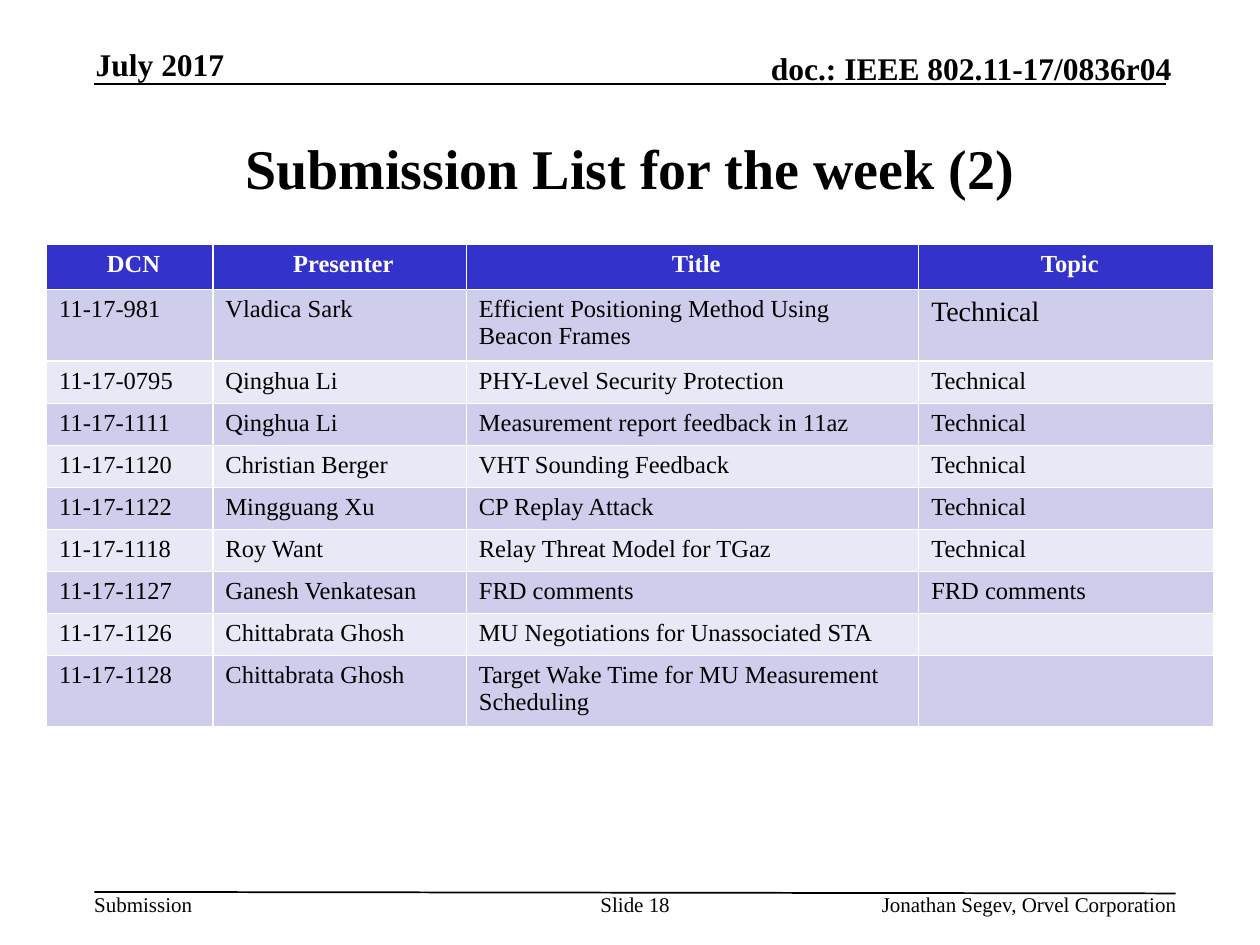
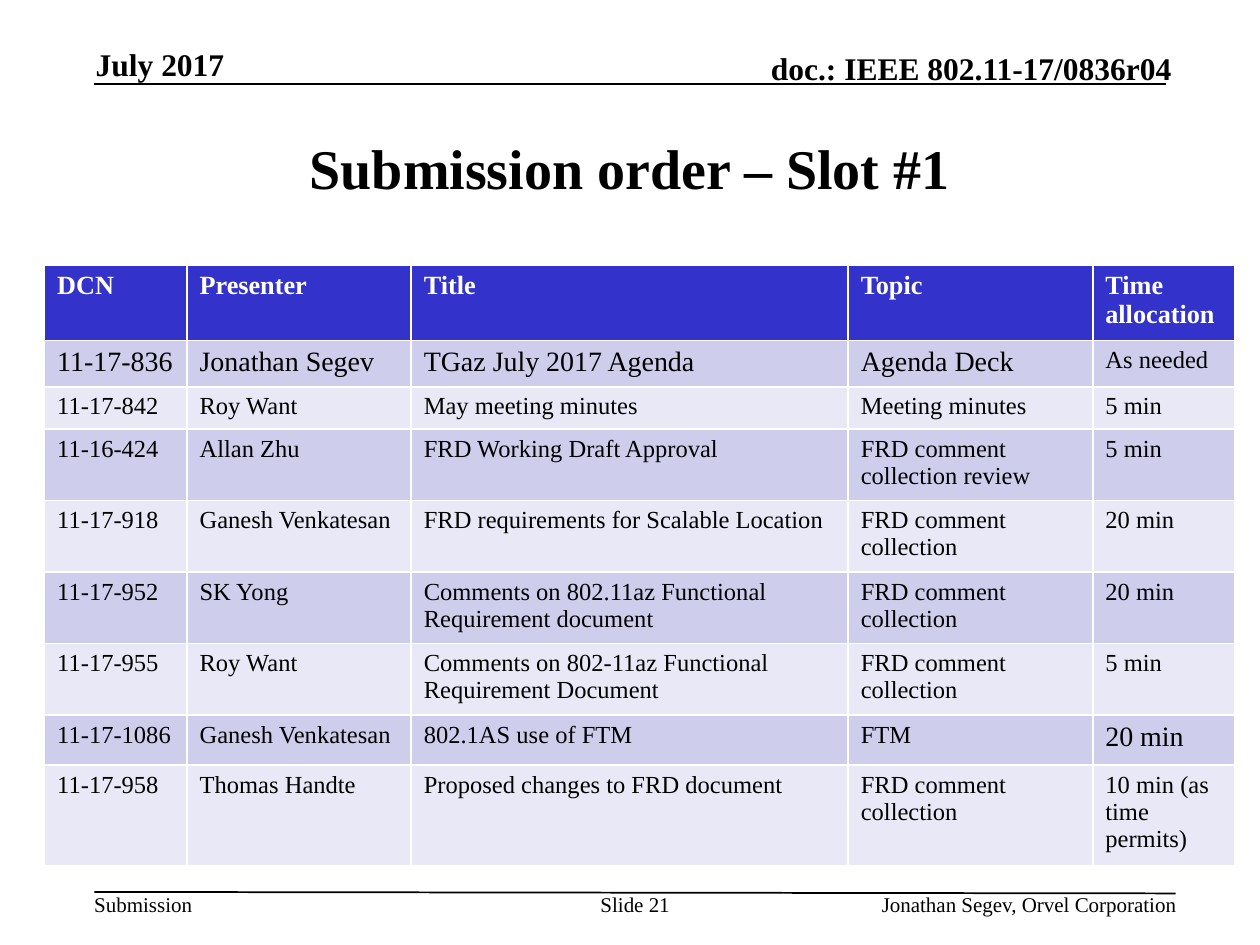
from dataclasses import dataclass

from lxml import etree
from pptx import Presentation
from pptx.dml.color import RGBColor
from pptx.enum.shapes import MSO_CONNECTOR
from pptx.enum.text import MSO_ANCHOR, PP_ALIGN
from pptx.oxml.ns import qn
from pptx.util import Cm, Pt

LEFT, CENTER, RIGHT = PP_ALIGN.LEFT, PP_ALIGN.CENTER, PP_ALIGN.RIGHT
TOP, MIDDLE, BOTTOM = MSO_ANCHOR.TOP, MSO_ANCHOR.MIDDLE, MSO_ANCHOR.BOTTOM
STRAIGHT = MSO_CONNECTOR.STRAIGHT
TITLE_ONLY = 5


@dataclass(frozen=True)
class Theme:
    font: str = "Times New Roman"
    ink: str = "000000"
    paper: str = "FFFFFF"
    header: str = "3333CC"
    bands: tuple = ("CECEEC", "E8E8F6")
    title_size: int = 32
    band_size: int = 18
    large_size: int = 16
    cell_size: int = 14
    footer_size: int = 12


THEME = Theme()

SLIDES = [
    {
        "title": "Submission List for the week (2)",
        "number": 18,
        "corner": (0.94, 4.93),
        "columns": [3.35, 5.11, 9.12, 5.94],
        "heights": [0.91, 1.34] + [0.8] * 7 + [1.34],
        "header": {"size": 14, "align": CENTER},
        "header_margin": 0.1,
        "large_cells": {(1, 3)},
        "rows": [
            ("DCN", "Presenter", "Title", "Topic"),
            ("11-17-981", "Vladica Sark", "Efficient Positioning Method Using Beacon Frames", "Technical"),
            ("11-17-0795", "Qinghua Li", "PHY-Level Security Protection", "Technical"),
            ("11-17-1111", "Qinghua Li", "Measurement report feedback in 11az", "Technical"),
            ("11-17-1120", "Christian Berger", "VHT Sounding Feedback", "Technical"),
            ("11-17-1122", "Mingguang Xu", "CP Replay Attack", "Technical"),
            ("11-17-1118", "Roy Want", "Relay Threat Model for TGaz", "Technical"),
            ("11-17-1127", "Ganesh Venkatesan", "FRD comments", "FRD comments"),
            ("11-17-1126", "Chittabrata Ghosh", "MU Negotiations for Unassociated STA", ""),
            ("11-17-1128", "Chittabrata Ghosh", "Target Wake Time for MU Measurement Scheduling", ""),
        ],
    },
    {
        "title": "Submission order – Slot #1",
        "number": 21,
        "corner": (0.9, 5.34),
        "columns": [2.87, 4.52, 8.81, 4.93, 2.87],
        "heights": [1.42, 0.85, 0.85] + [1.34] * 4 + [1.01, 1.88],
        "header": {"size": 15, "align": LEFT},
        "header_margin": 0.25,
        "large_cells": {(1, 0), (1, 1), (1, 2), (1, 3), (7, 4)},
        "rows": [
            ("DCN", "Presenter", "Title", "Topic", "Time allocation"),
            ("11-17-836", "Jonathan Segev", "TGaz July 2017 Agenda", "Agenda Deck", "As needed"),
            ("11-17-842", "Roy Want", "May meeting minutes", "Meeting minutes", "5 min"),
            ("11-16-424", "Allan Zhu", "FRD Working Draft Approval", "FRD comment collection review", "5 min"),
            ("11-17-918", "Ganesh Venkatesan", "FRD requirements for Scalable Location",
             "FRD comment collection", "20 min"),
            ("11-17-952", "SK Yong", "Comments on 802.11az Functional Requirement document",
             "FRD comment collection", "20 min"),
            ("11-17-955", "Roy Want", "Comments on 802-11az Functional Requirement Document",
             "FRD comment collection", "5 min"),
            ("11-17-1086", "Ganesh Venkatesan", "802.1AS use of FTM", "FTM", "20 min"),
            ("11-17-958", "Thomas Handte", "Proposed changes to FRD document",
             "FRD comment collection", "10 min (as time permits)"),
        ],
    },
]

BAND = {"size": THEME.band_size, "bold": True}
FOOTER = {"size": THEME.footer_size}
MARGIN_TEXTS = [
    ("July 2017", (1.93, 0.91, 5.21, 0.76), BOTTOM, BAND),
    ("doc.: IEEE 802.11-17/0836r04", (13.89, 0.99, 9.73, 0.76), BOTTOM, {**BAND, "align": RIGHT}),
    ("Submission", (1.9, 17.98, 2.5, 0.5), TOP, FOOTER),
    ("Slide {number}", (12.07, 17.98, 1.47, 1.02), TOP, {**FOOTER, "align": CENTER}),
    ("Jonathan Segev, Orvel Corporation", (14.88, 17.98, 8.84, 0.5), TOP, {**FOOTER, "align": RIGHT}),
]
RULES = [(1.9, 1.7, 23.5, 1.7), (1.9, 17.98, 23.7, 18.01)]


def lengths(values):
    return [Cm(value) for value in values]


def write_text(frame, text, size=THEME.cell_size, bold=False, color=THEME.ink, align=LEFT):
    frame.word_wrap = True
    para = frame.paragraphs[0]
    para.alignment = align
    if not text:
        etree.SubElement(para._p, qn("a:endParaRPr"), sz=str(size * 100))
        return
    span = para.add_run()
    span.text = text
    span.font.name = THEME.font
    span.font.size = Pt(size)
    span.font.bold = bold
    span.font.color.rgb = RGBColor.from_string(color)


def add_margins(page, number):
    for ends in RULES:
        rule = page.shapes.add_connector(STRAIGHT, *lengths(ends))
        rule.line.color.rgb = RGBColor.from_string(THEME.ink)
        rule.line.width = Pt(1)
        etree.SubElement(rule._element.spPr, qn("a:effectLst"))
    for text, place, anchor, style in MARGIN_TEXTS:
        frame = page.shapes.add_textbox(*lengths(place)).text_frame
        frame.margin_left = frame.margin_right = frame.margin_top = frame.margin_bottom = 0
        frame.vertical_anchor = anchor
        write_text(frame, text.format(number=number), **style)


def add_title(page, text):
    title = page.shapes.title
    title.left, title.top, title.width, title.height = lengths((1.9, 1.9, 21.6, 2.95))
    title.text_frame.vertical_anchor = MIDDLE
    write_text(title.text_frame, text, size=THEME.title_size, bold=True, align=CENTER)


def add_submissions(page, content):
    rows, columns, heights = content["rows"], content["columns"], content["heights"]
    place = (*content["corner"], sum(columns), sum(heights))
    table = page.shapes.add_table(len(rows), len(columns), *lengths(place)).table
    table.horz_banding = False
    for column, width in zip(table.columns, columns):
        column.width = Cm(width)
    for row, height in zip(table.rows, heights):
        row.height = Cm(height)
    for row_index, row in enumerate(rows):
        for column_index, text in enumerate(row):
            cell = table.cell(row_index, column_index)
            if row_index == 0:
                fill = THEME.header
                style = {"bold": True, "color": THEME.paper, **content["header"]}
                cell.margin_right = Cm(content["header_margin"])
            else:
                fill = THEME.bands[(row_index - 1) % 2]
                large = (row_index, column_index) in content["large_cells"]
                style = {"size": THEME.large_size if large else THEME.cell_size}
            cell.fill.solid()
            cell.fill.fore_color.rgb = RGBColor.from_string(fill)
            write_text(cell.text_frame, text, **style)


def main():
    deck = Presentation()
    deck.slide_width, deck.slide_height = Cm(25.4), Cm(19.05)
    for content in SLIDES:
        page = deck.slides.add_slide(deck.slide_layouts[TITLE_ONLY])
        add_margins(page, content["number"])
        add_title(page, content["title"])
        add_submissions(page, content)
    deck.save("out.pptx")


if __name__ == "__main__":
    main()
